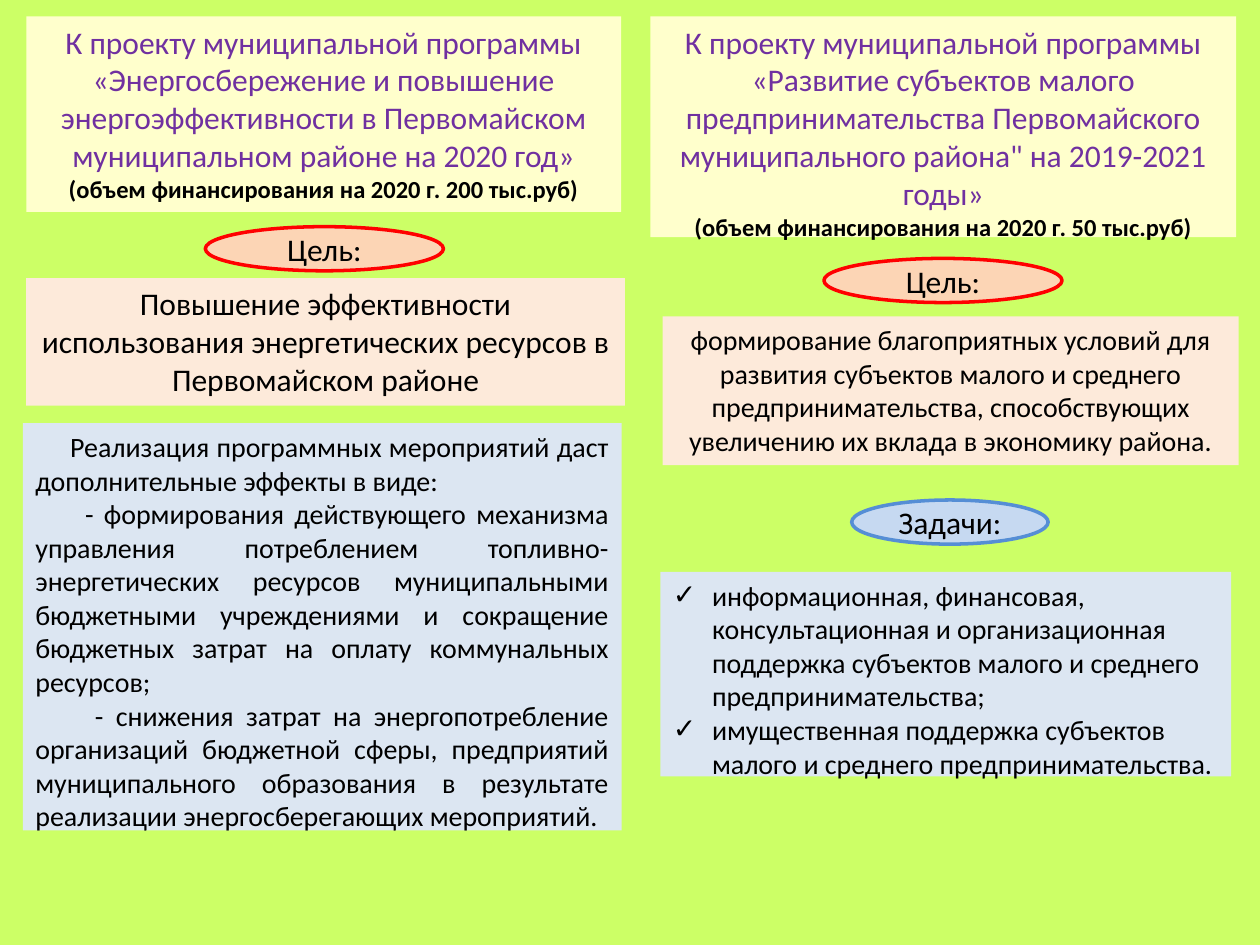
from lxml import etree
from pptx import Presentation
from pptx.dml.color import RGBColor
from pptx.enum.shapes import MSO_SHAPE
from pptx.enum.text import MSO_ANCHOR, MSO_AUTO_SIZE, PP_ALIGN
from pptx.oxml.ns import qn
from pptx.util import Cm, Pt

OVAL = MSO_SHAPE.OVAL
TOP, MIDDLE = MSO_ANCHOR.TOP, MSO_ANCHOR.MIDDLE
GROW = MSO_AUTO_SIZE.SHAPE_TO_FIT_TEXT
LEFT, CENTER, JUSTIFY = PP_ALIGN.LEFT, PP_ALIGN.CENTER, PP_ALIGN.JUSTIFY

FONT = "Calibri"
COLORS = {
    "page": "CCFF66", "heading": "FFFFCC", "goal": "FDEADA", "details": "DCE6F2",
    "goal_label": "FCD5B5", "goal_line": "FF0000",
    "task_label": "C6D9F1", "task_line": "558ED5",
    "program": "7030A0", "text": "000000",
}
LABEL_HEIGHT = 0.89
GOAL_LABEL_WIDTH = 4.8


def color(name):
    return RGBColor.from_string(COLORS[name])


def place(shape, left, top, width, height):
    shape.left, shape.top = Cm(left), Cm(top)
    shape.width, shape.height = Cm(width), Cm(height)


def paint(shape, fill):
    shape.fill.solid()
    shape.fill.fore_color.rgb = color(fill)


def write(shape, lines, size, align, anchor=TOP):
    frame = shape.text_frame
    frame.text = "\n".join(lines)
    frame.word_wrap = True
    frame.vertical_anchor = anchor
    for para in frame.paragraphs:
        para.alignment = align
        para.space_before = Pt(0)
        for span in para.runs:
            style(span, size, "text")


def style(span, size, ink, bold=False):
    span.font.name = FONT
    span.font.size = Pt(size)
    span.font.bold = bold
    span.font.color.rgb = color(ink)


def set_indent(para, margin, first_line, bullet=None):
    """Set the indents in cm, with the given bullet sign or none."""
    properties = para._p.get_or_add_pPr()
    properties.set("marL", str(Cm(margin)))
    properties.set("indent", str(Cm(first_line)))
    if bullet:
        etree.SubElement(properties, qn("a:buChar")).set("char", bullet)
    else:
        etree.SubElement(properties, qn("a:buNone"))


def fill_panel(panel, box, fill, lines, size, align):
    place(panel, *box)
    paint(panel, fill)
    write(panel, lines, size, align)
    panel.text_frame.auto_size = GROW


def fill_heading(panel, box, program, funding):
    fill_panel(panel, box, "heading", [program, funding], 18, CENTER)
    program_para, funding_para = panel.text_frame.paragraphs
    style(program_para.runs[0], 18, "program")
    style(funding_para.runs[0], 14, "text", bold=True)
    for para in (program_para, funding_para):
        set_indent(para, 0, 0)


def add_goal(page, box, text, size):
    panel = page.shapes.add_textbox(0, 0, 0, 0)
    fill_panel(panel, box, "goal", [text], size, CENTER)


def add_label(page, left, top, width, text, kind):
    label = page.shapes.add_shape(OVAL, 0, 0, 0, 0)
    label.shadow.inherit = False
    place(label, left, top, width, LABEL_HEIGHT)
    paint(label, kind + "_label")
    label.line.color.rgb = color(kind + "_line")
    label.line.width = Pt(2)
    write(label, [text], 18, CENTER, MIDDLE)


def add_energy_column(page, heading, effects, left, top):
    fill_heading(
        heading, (left + 0.07, top, 11.99, 3.94),
        "К проекту муниципальной программы «Энергосбережение и повышение "
        "энергоэффективности в Первомайском муниципальном районе на 2020 год»",
        "(объем финансирования на 2020 г. 200 тыс.руб)")
    add_goal(page, (left + 0.07, top + 5.28, 12.07, 2.57),
             "Повышение эффективности использования энергетических ресурсов "
             "в Первомайском районе", 18)
    add_label(page, left + 3.68, top + 4.24, GOAL_LABEL_WIDTH, "Цель:", "goal")
    fill_panel(effects, (left, top + 8.2, 12.07, 8.46), "details", [
        "Реализация программных мероприятий даст дополнительные эффекты в виде:",
        "- формирования действующего механизма управления потреблением "
        "топливно-энергетических ресурсов муниципальными бюджетными учреждениями "
        "и сокращение бюджетных затрат на оплату коммунальных ресурсов;",
        "- снижения затрат на энергопотребление организаций бюджетной сферы, "
        "предприятий муниципального образования в результате реализации "
        "энергосберегающих мероприятий.",
    ], 16, JUSTIFY)
    for para, first_line in zip(effects.text_frame.paragraphs, (0.7, 1.0, 1.2)):
        set_indent(para, 0, first_line)


def add_business_column(page, heading, tasks, left, top):
    fill_heading(
        heading, (left, top, 11.81, 4.7),
        "К проекту муниципальной программы «Развитие субъектов малого "
        "предпринимательства Первомайского муниципального района\" "
        "на 2019-2021 годы»",
        "(объем финансирования на 2020 г. 50 тыс.руб)")
    add_goal(page, (left + 0.25, top + 6.05, 11.61, 3),
             "формирование благоприятных условий для развития субъектов малого "
             "и среднего предпринимательства, способствующих увеличению их "
             "вклада в экономику района.", 16)
    add_label(page, left + 3.5, top + 4.88, GOAL_LABEL_WIDTH, "Цель:", "goal")
    add_label(page, left + 4.06, top + 9.75, 3.96, "Задачи:", "task")
    fill_panel(tasks, (left + 0.2, top + 11.2, 11.51, 4.37), "details", [
        "информационная, финансовая, консультационная и организационная "
        "поддержка субъектов малого и среднего предпринимательства;",
        "имущественная поддержка субъектов малого и среднего предпринимательства.",
    ], 16, LEFT)
    for para in tasks.text_frame.paragraphs:
        set_indent(para, 0.79, -0.79, "✓")


def main():
    deck = Presentation()
    deck.slide_width, deck.slide_height = Cm(25.4), Cm(19.05)
    page = deck.slides.add_slide(deck.slide_layouts.get_by_name("Comparison"))
    page.background.fill.solid()
    page.background.fill.fore_color.rgb = color("page")

    title, spare, effects, heading, tasks = list(page.placeholders)[:5]
    spare.element.getparent().remove(spare.element)
    add_energy_column(page, title, effects, 0.46, 0.33)
    add_business_column(page, heading, tasks, 13.11, 0.33)
    deck.save("out.pptx")


if __name__ == "__main__":
    main()
